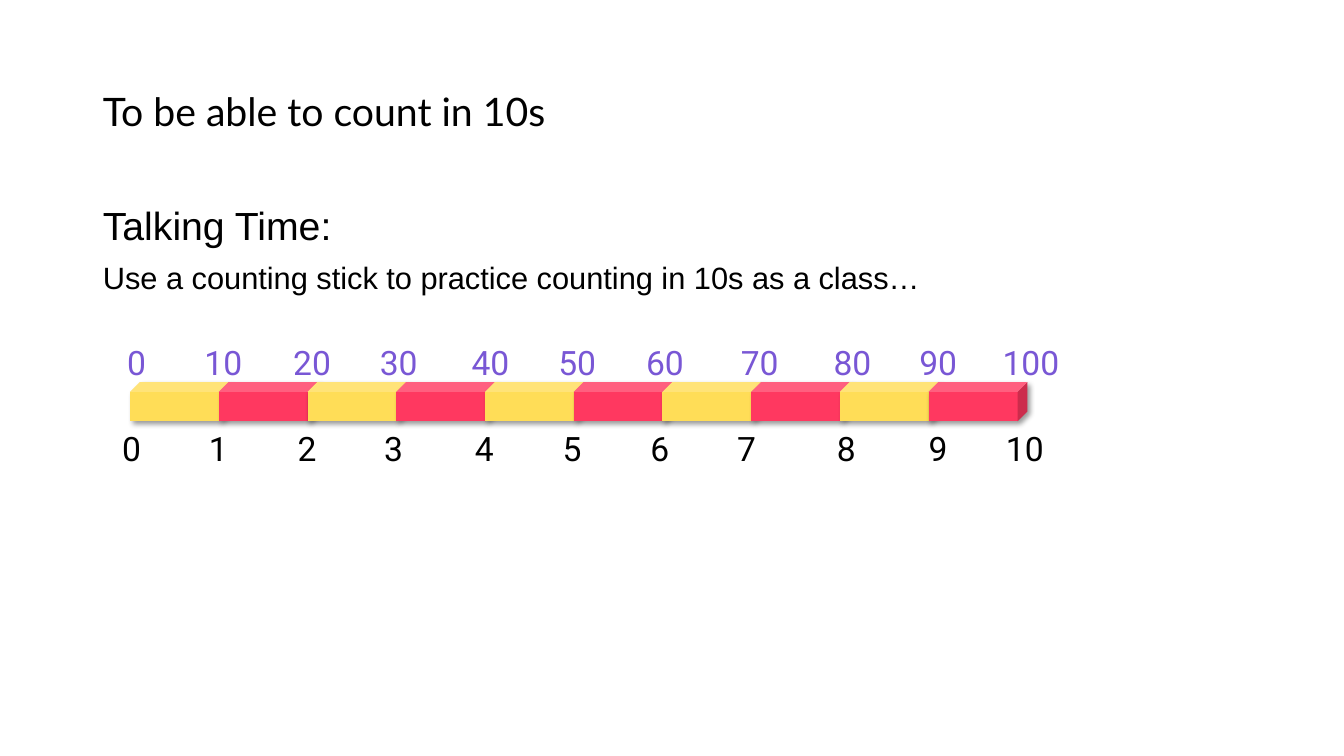
import pptx
import pptx.util
import pptx.dml.color
import pptx.enum.shapes
import pptx.enum.text
import pptx.oxml
import pptx.oxml.ns

Inches = pptx.util.Inches
Shape = pptx.enum.shapes.MSO_SHAPE
Align = pptx.enum.text.PP_ALIGN
Anchor = pptx.enum.text.MSO_ANCHOR

COLORS = {
    "black": "000000",
    "gold": "FFDD57",
    "red": "FF3860",
    "purple": "7957D5",
}

SHADOW = (
    '<a:outerShdw %s blurRad="50800" dist="38100" dir="2700000" algn="tl" rotWithShape="0">'
    '<a:srgbClr val="%s"><a:alpha val="40000"/></a:srgbClr></a:outerShdw>'
)


def paint(name):
    return pptx.dml.color.RGBColor.from_string(COLORS[name])


def write(para, text, size=24, font="Roboto", color="black",
          align=Align.LEFT, line=None, before=0):
    para.text = text
    para.alignment = align
    para.line_spacing = line
    para.space_before = pptx.util.Pt(before)
    para.font.size = pptx.util.Pt(size)
    para.font.name = font
    para.font.color.rgb = paint(color)


class Board:
    def __init__(self, deck):
        self.slide = deck.slides.add_slide(deck.slide_layouts[1])

    def place(self, holder, left, top, width, height, anchor):
        holder.left, holder.top = Inches(left), Inches(top)
        holder.width, holder.height = Inches(width), Inches(height)
        frame = holder.text_frame
        frame.word_wrap = True
        frame.auto_size = pptx.enum.text.MSO_AUTO_SIZE.NONE
        frame.vertical_anchor = anchor
        return frame

    def title(self, text):
        frame = self.place(self.slide.shapes.title, 0.92, 0.4, 9.76, 1.45, Anchor.MIDDLE)
        write(frame.paragraphs[0], text, size=28, font="Lato", line=0.9)

    def body(self, lines):
        frame = self.place(self.slide.placeholders[1], 0.92, 2, 11.5, 4.76, Anchor.TOP)
        for i, (text, size) in enumerate(lines):
            para = frame.add_paragraph() if i else frame.paragraphs[0]
            props = para._p.get_or_add_pPr()
            props.set("marL", "0")
            props.set("indent", "0")
            props.append(pptx.oxml.parse_xml("<a:buNone %s/>" % pptx.oxml.ns.nsdecls("a")))
            write(para, text, size=size, font="Arial", line=0.9, before=10 if i else 0)

    def shape(self, kind, left, top, width, height):
        item = self.slide.shapes.add_shape(
            kind, Inches(left), Inches(top), Inches(width), Inches(height))
        item.shadow.inherit = False
        item.fill.background()
        item.line.fill.background()
        return item

    def block(self, left, color):
        cube = self.shape(Shape.CUBE, left, 3.79, 0.98, 0.39)
        cube.fill.solid()
        cube.fill.fore_color.rgb = paint(color)
        effects = cube._element.spPr.find(pptx.oxml.ns.qn("a:effectLst"))
        effects.append(pptx.oxml.parse_xml(
            SHADOW % (pptx.oxml.ns.nsdecls("a"), COLORS["black"])))

    def label(self, text, left, top, color):
        box = self.shape(Shape.ROUNDED_RECTANGLE, left, top, 0.91, 0.54)
        box.text_frame.word_wrap = True
        box.text_frame.vertical_anchor = Anchor.MIDDLE
        write(box.text_frame.paragraphs[0], text, color=color, align=Align.CENTER)


def main():
    deck = pptx.Presentation()
    deck.slide_width, deck.slide_height = Inches(13.33), Inches(7.5)
    board = Board(deck)

    # Heading and task
    board.title("To be able to count in 10s")
    board.body([
        ("Talking Time:", 28),
        ("Use a counting stick to practice counting in 10s as a class…", 22),
    ])

    # Counting stick
    for i in range(10):
        board.block(1.29 + 0.88 * i, "red" if i % 2 else "gold")

    # Steps below the stick, tens above it
    steps = [0.85, 1.71, 2.59, 3.45, 4.35, 5.22, 6.09, 6.95, 7.94, 8.85, 9.71]
    tens = [0.9, 1.76, 2.64, 3.5, 4.41, 5.27, 6.14, 7.08, 8, 8.85, 9.77]
    for unit, top, color, lefts in ((1, 4.18, "black", steps), (10, 3.32, "purple", tens)):
        for i, left in enumerate(lefts):
            board.label(str(i * unit), left, top, color)

    deck.save("out.pptx")


if __name__ == "__main__":
    main()
